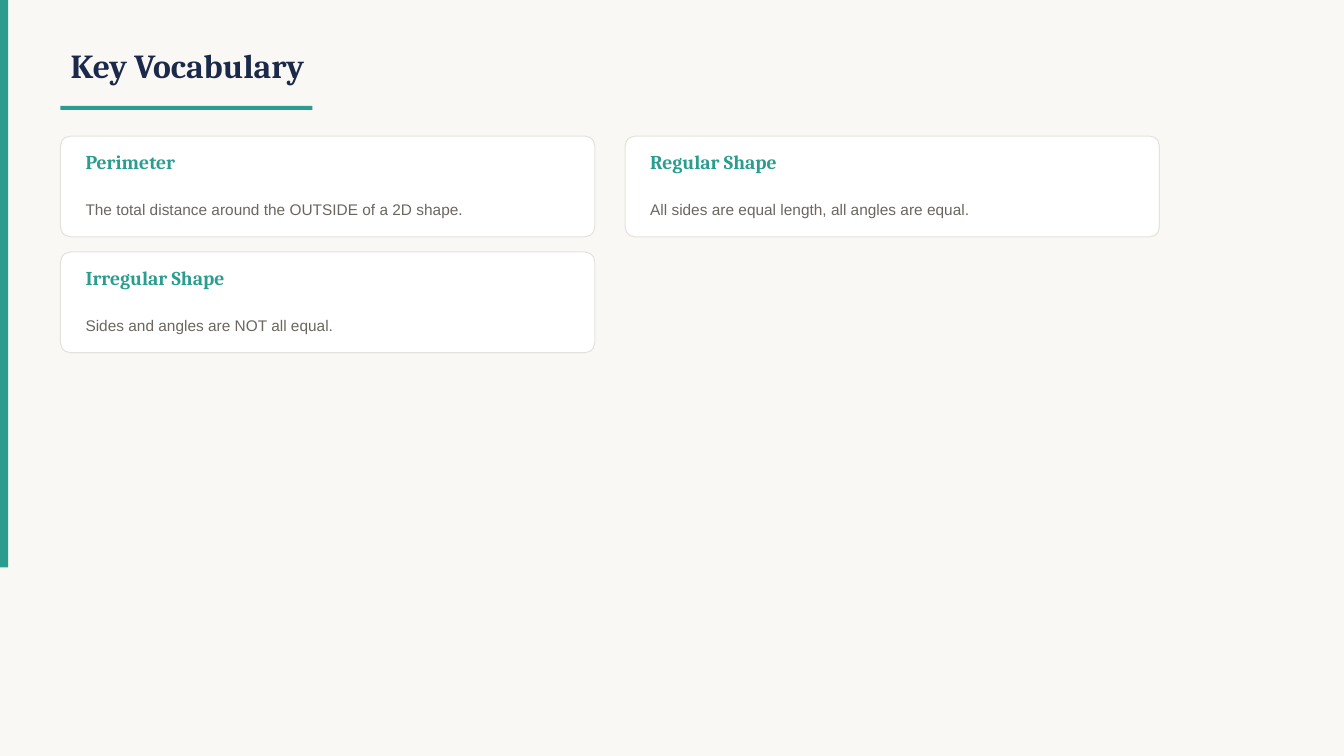
"""Build the Key Vocabulary slide with a grid of definition cards."""
from pptx import Presentation
from pptx.dml.color import RGBColor
from pptx.enum.shapes import MSO_SHAPE
from pptx.enum.text import MSO_ANCHOR, PP_ALIGN
from pptx.util import Inches, Pt

TEAL = "2A9D8F"
CARDS = [
    ("Perimeter", "The total distance around the OUTSIDE of a 2D shape."),
    ("Regular Shape", "All sides are equal length, all angles are equal."),
    ("Irregular Shape", "Sides and angles are NOT all equal."),
]


def paint(color_format, color):
    color_format.rgb = RGBColor.from_string(color)


def write(box, text, font_name, size, color, bold=False):
    frame = box.text_frame
    frame.word_wrap = True
    frame.vertical_anchor = MSO_ANCHOR.MIDDLE
    frame.text = text
    para = frame.paragraphs[0]
    para.alignment = PP_ALIGN.LEFT
    font = para.runs[0].font
    font.name, font.size, font.bold = font_name, Pt(size), bold
    paint(font.color, color)
    return para


deck = Presentation()
deck.slide_width, deck.slide_height = Inches(13.33), Inches(7.5)
page = deck.slides.add_slide(deck.slide_layouts[5])
page.background.fill.solid()
paint(page.background.fill.fore_color, "FAF8F5")

title = page.shapes.title
title.left, title.top = Inches(0.6), Inches(0.3)
title.width, title.height = Inches(10), Inches(0.7)
write(title, "Key Vocabulary", "Cambria", 24, "1B2A4A", True)

for left, top, width, height in [(0, 0, 0.08, 5.63), (0.6, 1.05, 2.5, 0.04)]:
    bar = page.shapes.add_shape(
        MSO_SHAPE.RECTANGLE, Inches(left), Inches(top), Inches(width), Inches(height))
    bar.shadow.inherit = False
    bar.fill.solid()
    paint(bar.fill.fore_color, TEAL)
    bar.line.fill.background()

for index, (term, meaning) in enumerate(CARDS):
    row, column = divmod(index, 2)
    left, top = 0.6 + 5.6 * column, 1.35 + 1.15 * row
    card = page.shapes.add_shape(
        MSO_SHAPE.ROUNDED_RECTANGLE, Inches(left), Inches(top), Inches(5.3), Inches(1))
    card.adjustments[0] = 0.1
    card.shadow.inherit = False
    card.fill.solid()
    paint(card.fill.fore_color, "FFFFFF")
    paint(card.line.color, "E5E2DC")
    card.line.width = Pt(0.75)

    term_box = page.shapes.add_textbox(
        Inches(left + 0.15), Inches(top + 0.08), Inches(5), Inches(0.35))
    write(term_box, term, "Cambria", 14, TEAL, True)
    meaning_box = page.shapes.add_textbox(
        Inches(left + 0.15), Inches(top + 0.45), Inches(5), Inches(0.5))
    write(meaning_box, meaning, "Arial", 11, "6B6660").line_spacing = 1.3

deck.save("out.pptx")
